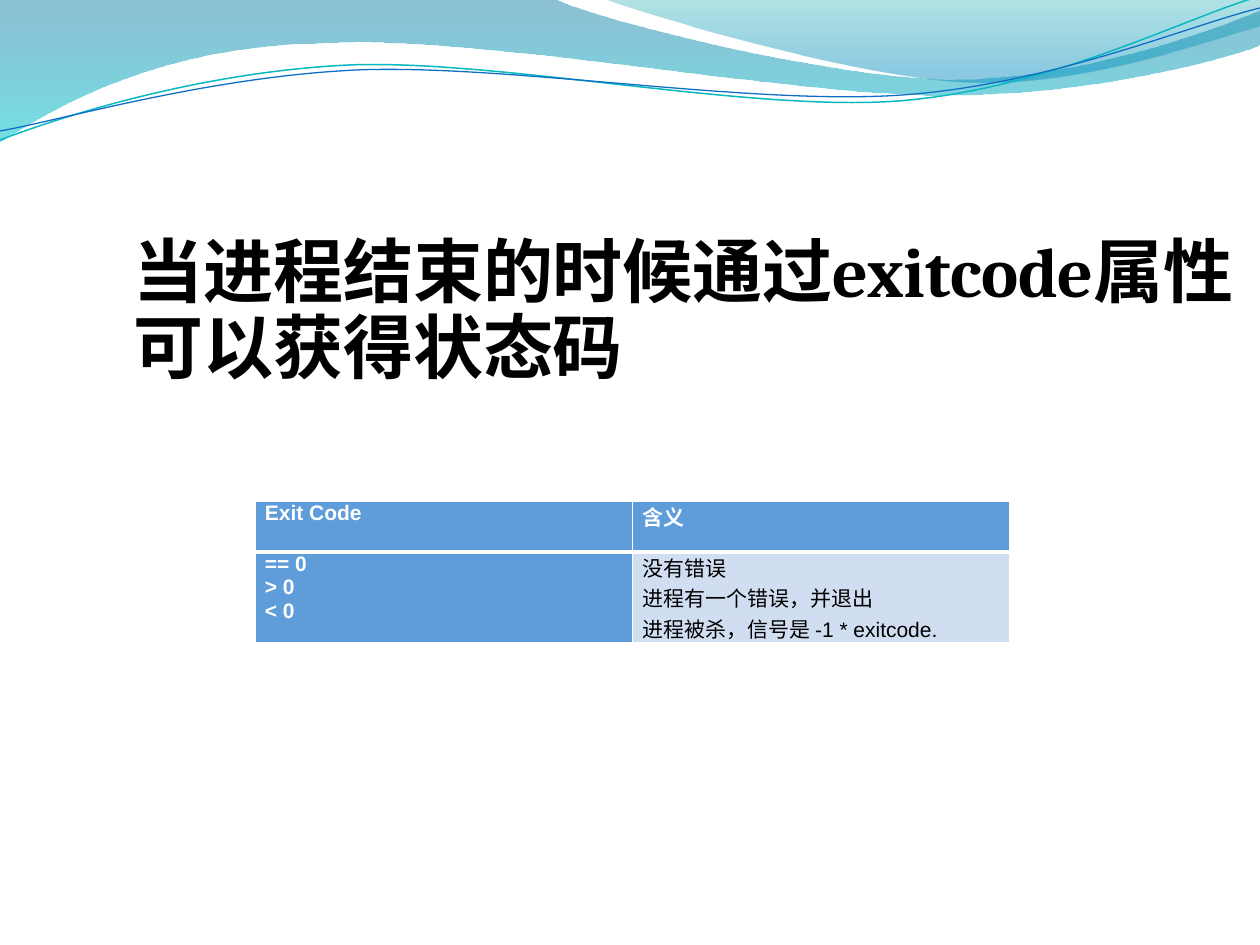
"""Build the slide on process exit codes: wave header, statement and code table."""
from typing import NamedTuple

from lxml import etree
from pptx import Presentation
from pptx import util as u
from pptx.dml.color import RGBColor
from pptx.enum import text
from pptx.oxml import ns

PX = 914400 / 126
COLORS = {
    "white": "FFFFFF", "black": "000000", "header": "5E9CDA", "body": "D1DEF1",
    "deep": "0074A1", "aqua": "00C6CF", "teal": "00A1A9", "sky": "008BBF",
    "teal_line": "0AB8BF", "blue_line": "0F6FC6",
}
Point = tuple[int, int]


class Stop(NamedTuple):
    position: float
    color: str
    opacity: int


class Wave(NamedTuple):
    start: Point
    segments: list[list[Point]]
    stops: list[Stop] = []
    line: str = ""
    width: float = 0


class CellText(NamedTuple):
    lines: list[str]
    fill: str
    color: str
    bold: bool
    top: int
    bottom: int


WAVES = [
    Wave((0, 0), [
        [(554, -1)],
        [(600, 21), (837, 79), (955, 79)],
        [(1075, 79), (1207, 33), (1260, 11)],
        [(1261, 45)],
        [(1239, 55), (1096, 96), (940, 95)],
        [(784, 95), (481, 35), (324, 43)],
        [(163, 45), (58, 105), (-1, 142)],
    ], [Stop(0, "deep", 45), Stop(1, "aqua", 55)]),
    Wave((604, -1), [
        [(641, 14), (859, 78), (969, 82)],
        [(1079, 87), (1211, 40), (1260, 26)],
        [(1260, 0)],
    ], [Stop(0, "teal", 30), Stop(0.8, "sky", 45)]),
    Wave((0, 140), [
        [(60, 117), (199, 72), (349, 65)],
        [(498, 59), (747, 112), (898, 101)],
        [(1050, 89), (1182, 19), (1257, -3)],
    ], line="teal_line", width=0.85),
    Wave((0, 131), [
        [(59, 121), (207, 77), (357, 70)],
        [(508, 64), (752, 106), (903, 95)],
        [(1053, 84), (1187, 26), (1260, 8)],
    ], line="blue_line", width=0.75),
]
ROWS = [
    [CellText(["Exit Code"], "header", "white", True, 1, 3),
     CellText(["含义"], "header", "white", True, 1, 3)],
    [CellText(["== 0", "> 0", "< 0"], "header", "white", True, 3, 1),
     CellText(["没有错误", "进程有一个错误，并退出", "进程被杀，信号是 -1 * exitcode."],
              "body", "black", False, 3, 1)],
]


def px(length: int) -> u.Emu:
    """Convert pixels to EMU."""
    return u.Emu(round(length * PX))


def rgb(name: str) -> RGBColor:
    """Look up a named colour."""
    return RGBColor.from_string(COLORS[name])


def bend(shape, segments: list[list[Point]]) -> None:
    """Turn each run of three line steps into one cubic curve."""
    steps = iter(list(shape._element.iter(ns.qn("a:lnTo"))))
    for segment in segments:
        group = [next(steps) for _ in segment]
        if len(group) == 3:
            curve = etree.Element(ns.qn("a:cubicBezTo"))
            group[0].addprevious(curve)
            for step in group:
                curve.append(step[0])
                step.getparent().remove(step)


def draw_wave(page, wave: Wave) -> None:
    """Draw a gradient band or a thin curve."""
    builder = page.shapes.build_freeform(px(wave.start[0]), px(wave.start[1]))
    points = [(px(x), px(y)) for segment in wave.segments for x, y in segment]
    builder.add_line_segments(points, close=bool(wave.stops))
    shape = builder.convert_to_shape()
    bend(shape, wave.segments)
    shape.shadow.inherit = False
    if not wave.stops:
        shape.fill.background()
        shape.line.color.rgb = rgb(wave.line)
        shape.line.width = u.Pt(wave.width)
        return
    shape.line.fill.background()
    shape.fill.gradient()
    shape.fill.gradient_angle = 270
    for target, stop in zip(shape.fill.gradient_stops, wave.stops):
        target.color.rgb = rgb(stop.color)
        target.position = stop.position
    for color, stop in zip(shape._element.spPr.iter(ns.qn("a:srgbClr")), wave.stops):
        etree.SubElement(color, ns.qn("a:alpha"), val=str(stop.opacity * 1000))


def draw_statement(page, words: str) -> None:
    """Write the bold statement above the table."""
    box = page.shapes.add_textbox(px(121), px(231), px(1139), px(640))
    box.text_frame.word_wrap = True
    para = box.text_frame.paragraphs[0]
    para.line_spacing = 0.9
    para.space_before = u.Pt(4)
    span = para.add_run()
    span.text = words
    span.font.name = "Cambria"
    span.font.size = u.Pt(40)
    span.font.bold = True
    span.font.color.rgb = rgb("black")
    etree.SubElement(span.font._element, ns.qn("a:ea"), typeface="Arial")


def fill_cell(cell, content: CellText) -> None:
    """Set the borders, fill and text of one cell."""
    properties = cell._tc.get_or_add_tcPr()
    widths = {"lnL": 1, "lnR": 1, "lnT": content.top, "lnB": content.bottom}
    for side, width in widths.items():
        border = etree.SubElement(properties, ns.qn(f"a:{side}"), w=str(u.Pt(width)))
        paint = etree.SubElement(border, ns.qn("a:solidFill"))
        etree.SubElement(paint, ns.qn("a:srgbClr"), val=COLORS["white"])
    cell.fill.solid()
    cell.fill.fore_color.rgb = rgb(content.fill)
    cell.margin_left = cell.margin_right = px(10)
    cell.margin_top = cell.margin_bottom = 0
    cell.text_frame.text = "\n".join(content.lines)
    for para in cell.text_frame.paragraphs:
        para.alignment = text.PP_ALIGN.JUSTIFY
        para.font.name = "Arial"
        para.font.size = u.Pt(12)
        para.font.bold = content.bold
        para.font.color.rgb = rgb(content.color)


def draw_table(page) -> None:
    """Add the exit code table."""
    table = page.shapes.add_table(2, 2, px(255), px(501), px(755), px(142)).table
    table.first_row = table.horz_banding = False
    for row, height, contents in zip(table.rows, (51, 91), ROWS):
        row.height = px(height)
        for cell, content in zip(row.cells, contents):
            fill_cell(cell, content)


def main() -> None:
    """Assemble and save the deck."""
    deck = Presentation()
    deck.slide_width, deck.slide_height = px(1260), px(945)
    page = deck.slides.add_slide(deck.slide_layouts[6])
    for wave in WAVES:
        draw_wave(page, wave)
    draw_statement(page, "当进程结束的时候通过exitcode属性可以获得状态码")
    draw_table(page)
    deck.save("out.pptx")


if __name__ == "__main__":
    main()
